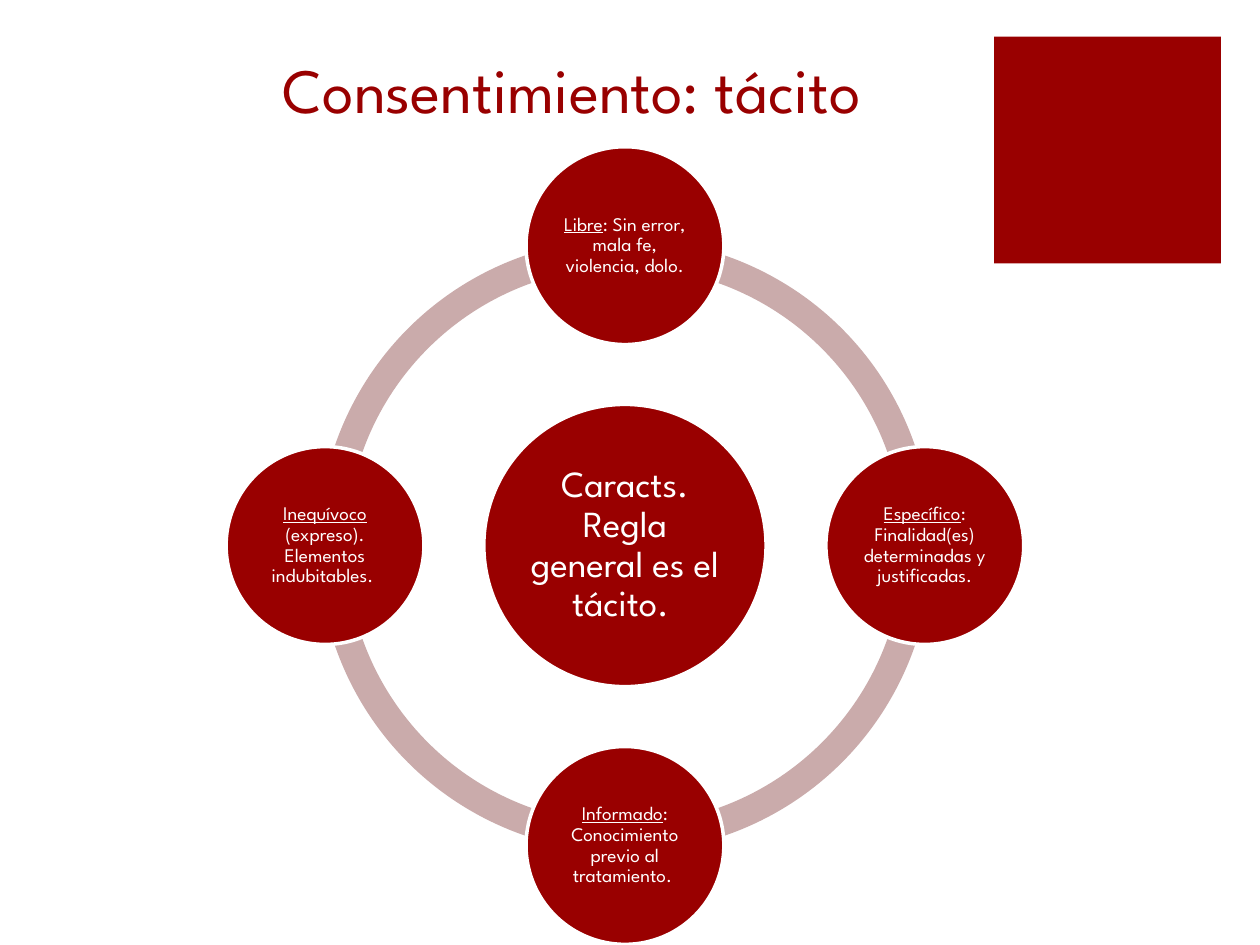
"""Build the slide on the traits of tacit consent."""
from math import cos, radians, sin

from pptx import Presentation
from pptx.dml.color import RGBColor
from pptx.enum.shapes import MSO_SHAPE
from pptx.enum.text import MSO_ANCHOR, MSO_AUTO_SIZE, PP_ALIGN
from pptx.util import Inches, Pt

RECT, OVAL, ARC = MSO_SHAPE.RECTANGLE, MSO_SHAPE.OVAL, MSO_SHAPE.BLOCK_ARC
MIDDLE, BOTTOM = MSO_ANCHOR.MIDDLE, MSO_ANCHOR.BOTTOM
CENTER = PP_ALIGN.CENTER
NO_FIT = MSO_AUTO_SIZE.NONE

FONT = "League Spartan"
COLORS = {"red": "990000", "pink": "CAABAB", "white": "FFFFFF"}
CX, CY = 4.96, 4.33
ORBIT = 2.38
RING_SIZE = 4.87
TRAITS = [
    (-90, "Libre", ": Sin error, mala fe, violencia, dolo."),
    (0, "Específico", ": Finalidad(es) determinadas y justificadas."),
    (90, "Informado", ": Conocimiento previo al tratamiento. "),
    (180, "Inequívoco", " (expreso). Elementos indubitables. "),
]


class Deck:
    """Hold the style and the current slide."""

    def __init__(self):
        self.prs = Presentation()
        self.prs.slide_width, self.prs.slide_height = Inches(10), Inches(7.5)
        self.s = self.prs.slides.add_slide(self.prs.slide_layouts[5])

    def color(self, name):
        return RGBColor.from_string(COLORS[name])

    def add_text(self, tf, runs, size, color, anchor, inset):
        tf.word_wrap = True
        tf.auto_size = NO_FIT
        tf.vertical_anchor = anchor
        tf.margin_left = tf.margin_right = Inches(inset)
        tf.margin_top = tf.margin_bottom = Inches(min(inset, 0.05))
        p = tf.paragraphs[0]
        p.alignment = CENTER
        for text, underline in runs:
            r = p.add_run()
            r.text = text
            r.font.name, r.font.size = FONT, Pt(size)
            r.font.underline = underline
            r.font.color.rgb = self.color(color)
        return p

    def title(self, text, x, y, w, h):
        sp = self.s.shapes.title
        sp.left, sp.top, sp.width, sp.height = map(Inches, (x, y, w, h))
        self.add_text(sp.text_frame, [(text, False)], 36, "red", BOTTOM, 0.1)

    def shape(self, kind, x, y, size, fill):
        sp = self.s.shapes.add_shape(
            kind, Inches(x), Inches(y), Inches(size), Inches(size))
        sp.shadow.inherit = False
        sp.fill.solid()
        sp.fill.fore_color.rgb = self.color(fill)
        sp.line.fill.background()
        return sp

    def arc(self, start):
        sp = self.shape(ARC, CX - RING_SIZE / 2, CY - RING_SIZE / 2, RING_SIZE, "pink")
        end = (start + 90) % 360
        for i, value in enumerate((start * 0.6, end * 0.6, 0.046)):
            sp.adjustments[i] = value

    def circle(self, cx, cy, size, runs, font_size, inset):
        sp = self.shape(OVAL, cx - size / 2, cy - size / 2, size, "red")
        sp.line.color.rgb = self.color("white")
        sp.line.width = Pt(2)
        p = self.add_text(sp.text_frame, runs, font_size, "white", MIDDLE, inset)
        p.line_spacing = 0.9


def main():
    deck = Deck()
    deck.shape(RECT, 7.89, 0.29, 1.8, "red")
    for start in (180, 90, 0, 270):
        deck.arc(start)
    deck.circle(CX, CY, 2.24,
                [("Caracts. Regla general es el tácito. ", False)], 21, 0.03)
    for angle, name, detail in TRAITS:
        a = radians(angle)
        deck.circle(CX + ORBIT * cos(a), CY + ORBIT * sin(a), 1.57,
                    [(name, True), (detail, False)], 11, 0.02)
    deck.title("Consentimiento: tácito", 0.04, 0, 9, 1.05)
    deck.prs.save("out.pptx")


if __name__ == "__main__":
    main()
